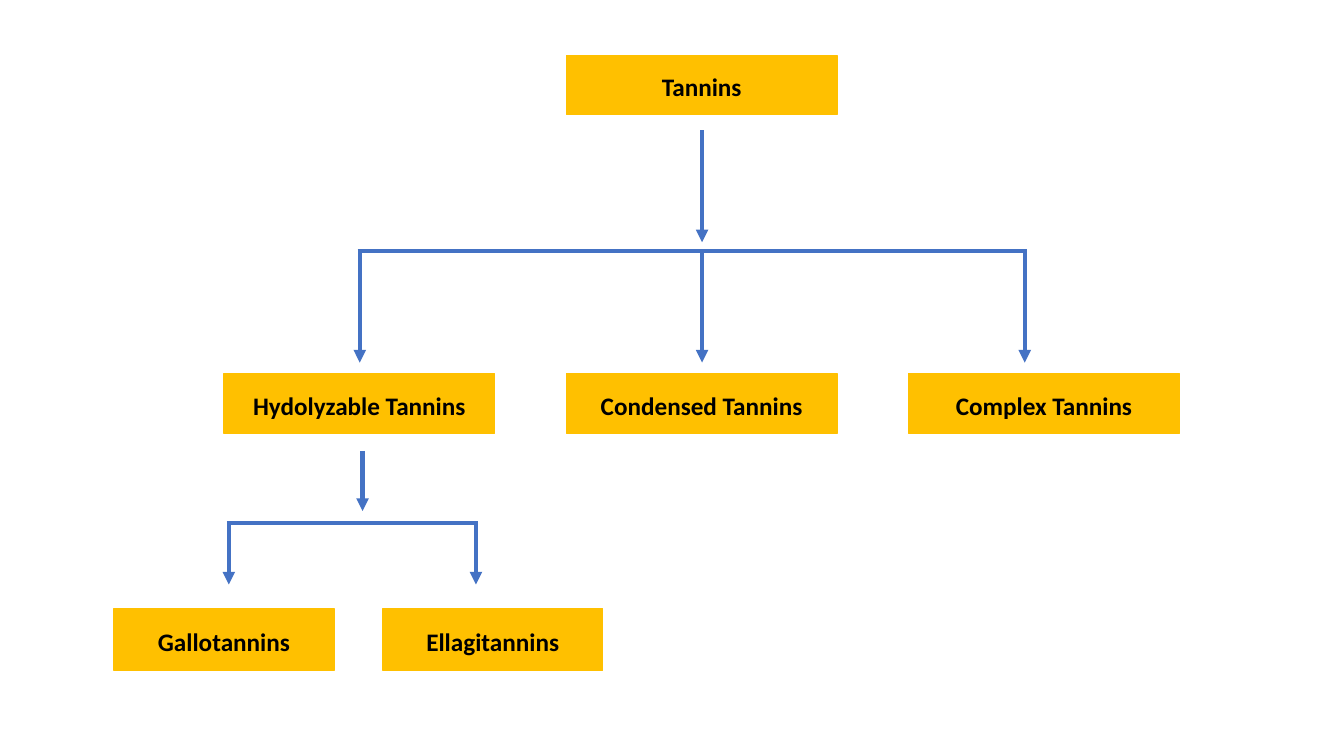
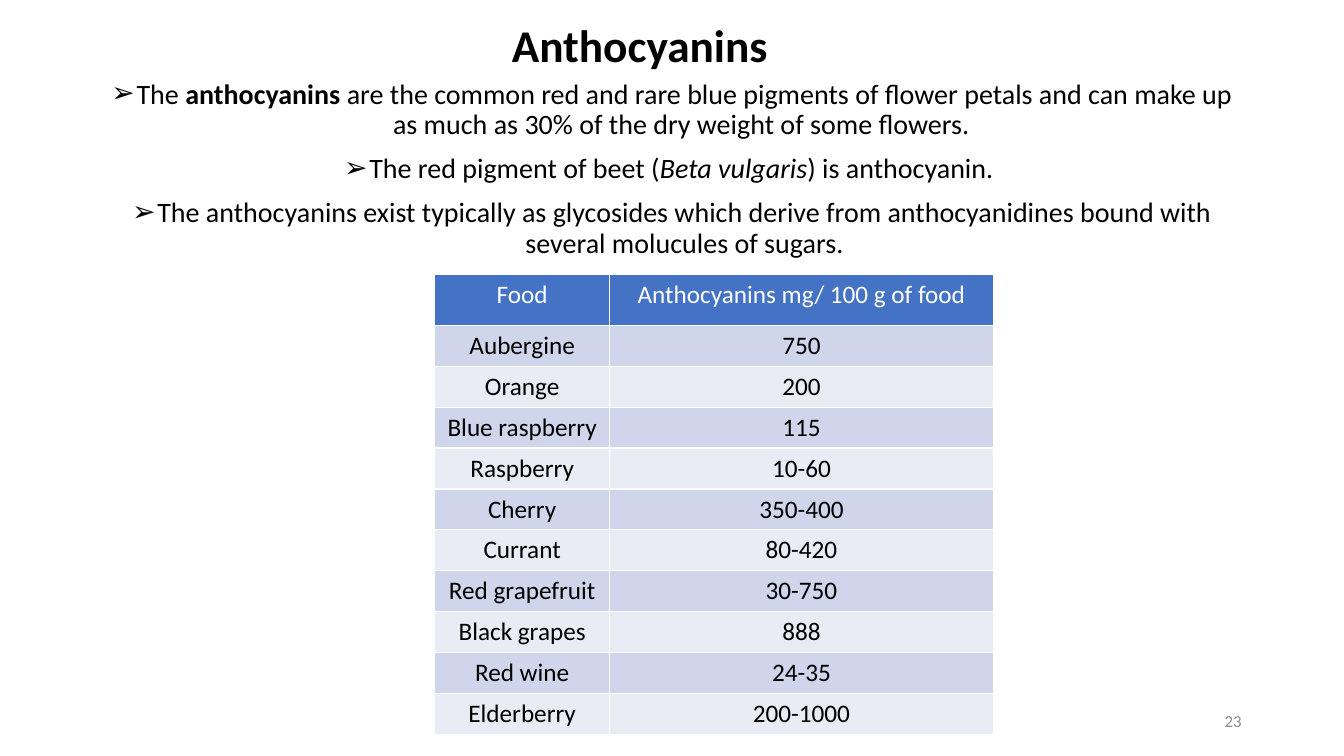
import pptx
import pptx.util
import pptx.dml.color
import pptx.enum.shapes
import pptx.enum.text
import pptx.oxml.ns
import lxml.etree

Pt = pptx.util.Pt
qn = pptx.oxml.ns.qn
ALIGN = pptx.enum.text.PP_ALIGN
MIDDLE = pptx.enum.text.MSO_ANCHOR.MIDDLE
HEX = {"gold": "FFC000", "blue": "4472C4", "black": "000000", "white": "FFFFFF",
       "gray": "8C8C8C", "dark": "CFD5EA", "light": "E9EBF5"}
RGB = {name: pptx.dml.color.RGBColor.from_string(code) for name, code in HEX.items()}


def style(para, size, color="black", bold=False, align=ALIGN.CENTER):
    para.alignment = align
    for run in para.runs:
        run.font.name = "Calibri"
        run.font.size = Pt(size)
        run.font.bold = bold
        run.font.color.rgb = RGB[color]


def draw_line(slide, x1, y1, x2, y2, arrow=True):
    line = slide.shapes.add_connector(pptx.enum.shapes.MSO_CONNECTOR.STRAIGHT,
                                      Pt(x1), Pt(y1), Pt(x2), Pt(y2))
    line.line.color.rgb = RGB["blue"]
    line.line.width = Pt(3)
    props = line._element.spPr
    if arrow:
        lxml.etree.SubElement(props.find(qn("a:ln")), qn("a:tailEnd"), type="triangle")
    lxml.etree.SubElement(props, qn("a:effectLst"))


deck = pptx.Presentation()
deck.slide_width, deck.slide_height = Pt(960), Pt(540)

# Slide 1: tree of tannins
tree = deck.slides.add_slide(deck.slide_layouts[6])
left, step, wide, tall = 160, 244.5, 193.5, 42.5
boxes = [("Tannins", left + step, 39.5, wide, tall)]
kinds = ["Hydolyzable Tannins", "Condensed Tannins", "Complex Tannins"]
for col, kind in enumerate(kinds):
    boxes.append((kind, left + col * step, 267, wide, tall))
for col, kind in enumerate(["Gallotannins", "Ellagitannins"]):
    boxes.append((kind, 81.5 + col * 192, 434.5, 157, 44.5))

for label, x, y, w, h in boxes:
    box = tree.shapes.add_shape(pptx.enum.shapes.MSO_SHAPE.RECTANGLE,
                                Pt(x), Pt(y), Pt(w), Pt(h))
    box.shadow.inherit = False
    box.fill.solid()
    box.fill.fore_color.rgb = RGB["gold"]
    box.line.color.rgb = RGB["gold"]
    box.line.width = Pt(1)
    frame = box.text_frame
    frame.text = label
    frame.vertical_anchor = MIDDLE
    frame.margin_top = Pt(6)
    style(frame.paragraphs[0], 18, bold=True)

# Each branch: stem x, stem top, stem end, bar y, drop end, drop places
branches = [(501.5, 93, 173, 179.5, 259, (257, 501.5, 732)),
            (259, 322, 365, 373.5, 417.5, (163.5, 340))]
for stem, top, end, bar, low, drops in branches:
    draw_line(tree, stem, top, stem, end)
    draw_line(tree, drops[0] - 1.5, bar, drops[-1] + 1.5, bar, arrow=False)
    for x in drops:
        draw_line(tree, x, bar, x, low)

# Slide 2: title and list
page = deck.slides.add_slide(deck.slide_layouts[1])
title, body = page.placeholders
title.left, title.top, title.width, title.height = Pt(43), Pt(12), Pt(828), Pt(44)
title.text_frame.text = "Anthocyanins"
title.text_frame.vertical_anchor = MIDDLE
style(title.text_frame.paragraphs[0], 32.4, bold=True)
title.text_frame.paragraphs[0].line_spacing = 0.9

body.left, body.top, body.width, body.height = Pt(66), Pt(53.5), Pt(828), Pt(144.5)
body.text_frame.auto_size = pptx.enum.text.MSO_AUTO_SIZE.NONE
points = [
    ["The ", "anthocyanins ", "are the common red and rare blue pigments of flower petals "
     "and can make up as much as 30% of the dry weight of some flowers. "],
    ["The red pigment of beet (", "Beta vulgaris", ") is anthocyanin. "],
    ["The anthocyanins exist typically as glycosides which derive from "
     "anthocyanidines bound with several molucules of sugars."],
]
for num, parts in enumerate(points):
    para = body.text_frame.add_paragraph() if num else body.text_frame.paragraphs[0]
    for part in parts:
        para.add_run().text = part
    style(para, 20)
    para.line_spacing = 0.9
    para.space_before = Pt(10)
    props = para._p.get_or_add_pPr()
    props.set("marL", str(Pt(18)))
    props.set("indent", str(-Pt(18)))
    lxml.etree.SubElement(props, qn("a:buFont"), typeface="Arial")
    lxml.etree.SubElement(props, qn("a:buChar"), char="➢")
body.text_frame.paragraphs[0].runs[1].font.bold = True
body.text_frame.paragraphs[1].runs[1].font.italic = True

# Table of foods
rows = [("Food", "Anthocyanins mg/ 100 g of food"), ("Aubergine", "750"),
        ("Orange", "200"), ("Blue raspberry", "115"), ("Raspberry", "10-60"),
        ("Cherry", "350-400"), ("Currant", "80-420"), ("Red grapefruit", "30-750"),
        ("Black grapes", "888"), ("Red wine", "24-35"), ("Elderberry", "200-1000")]
head, high = 36.5, 29.2
grid = page.shapes.add_table(len(rows), 2, Pt(310.5), Pt(196), Pt(399),
                             Pt(head + high * (len(rows) - 1))).table
grid.columns[0].width, grid.columns[1].width = Pt(125), Pt(274)
for num, row in enumerate(rows):
    grid.rows[num].height = Pt(high if num else head)
    fill = ("light", "dark")[num % 2] if num else "blue"
    for col, text in enumerate(row):
        cell = grid.cell(num, col)
        cell.text_frame.text = text
        cell.fill.solid()
        cell.fill.fore_color.rgb = RGB[fill]
        style(cell.text_frame.paragraphs[0], 18, "black" if num else "white")

# Page number
foot = page.shapes.add_textbox(Pt(678), Pt(500.5), Pt(216), Pt(28.5)).text_frame
foot.word_wrap = True
foot.vertical_anchor = MIDDLE
foot.text = "23"
style(foot.paragraphs[0], 12, "gray", align=ALIGN.RIGHT)

deck.save("out.pptx")
